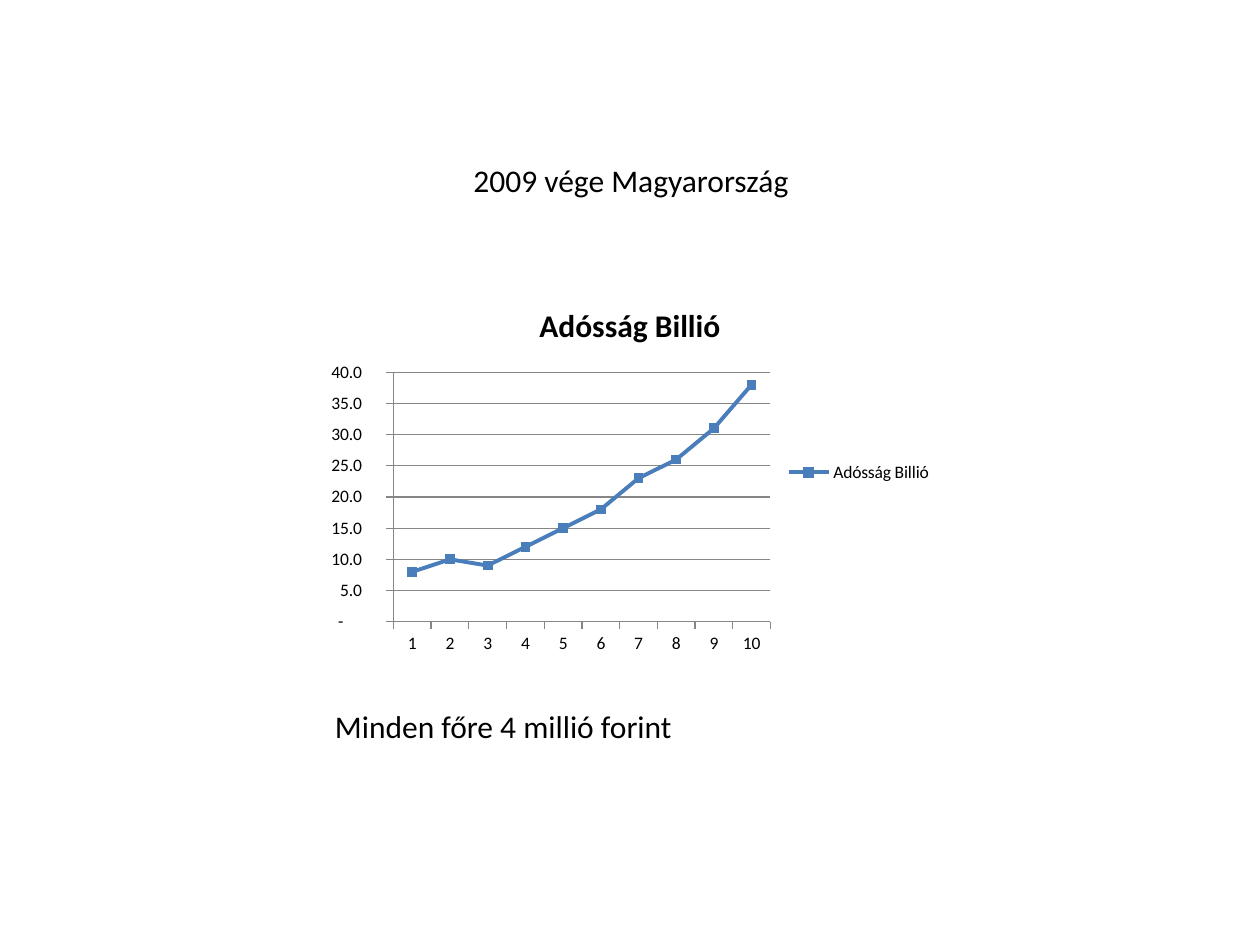
import pptx
import pptx.chart.data
import pptx.dml.color
import pptx.enum.chart
import pptx.enum.text
import pptx.util
from pptx.util import Inches

COLORS = {"text": "000000", "series": "4F81BD", "line": "4A7EBB", "axis": "868686"}
FONT = "Calibri"
SERIES_NAME = "Adósság Billió"
DEBT = [8, 10, 9, 12, 15, 18, 23, 26, 31, 38]
NUMBER_FORMAT = (r'_-* #,##0.0\ _F_t_-;\-* #,##0.0\ _F_t_-;'
                 r'_-* "-"??\ _F_t_-;_-@_-')


def color(name):
    return pptx.dml.color.RGBColor.from_string(COLORS[name])


def style_font(font, size, bold=False):
    font.name = FONT
    font.size = pptx.util.Pt(size)
    font.bold = bold
    font.color.rgb = color("text")


presentation = pptx.Presentation()
presentation.slide_width = Inches(10)
presentation.slide_height = Inches(7.5)
slide = presentation.slides.add_slide(presentation.slide_layouts[6])

# Debt chart
chart_data = pptx.chart.data.CategoryChartData(number_format="0.0")
chart_data.categories = [str(year) for year in range(1, len(DEBT) + 1)]
chart_data.add_series(SERIES_NAME, DEBT)
chart = slide.shapes.add_chart(
    pptx.enum.chart.XL_CHART_TYPE.LINE_MARKERS,
    Inches(2.5), Inches(2.25), Inches(5), Inches(3), chart_data).chart
style_font(chart.font, 10)

chart.has_title = True
chart.chart_title.include_in_layout = False
title_frame = chart.chart_title.text_frame
title_frame.text = SERIES_NAME
style_font(title_frame.paragraphs[0].runs[0].font, 18, bold=True)

chart.has_legend = True
chart.legend.position = pptx.enum.chart.XL_LEGEND_POSITION.RIGHT
chart.legend.include_in_layout = False

for axis in (chart.category_axis, chart.value_axis):
    axis.major_tick_mark = pptx.enum.chart.XL_TICK_MARK.OUTSIDE
    axis.minor_tick_mark = pptx.enum.chart.XL_TICK_MARK.NONE
    axis.format.line.color.rgb = color("axis")
    axis.format.line.width = pptx.util.Pt(0.75)

value_axis = chart.value_axis
value_axis.minimum_scale = 0
value_axis.maximum_scale = 40
value_axis.major_unit = 5
value_axis.tick_labels.number_format = NUMBER_FORMAT
value_axis.tick_labels.number_format_is_linked = False
value_axis.has_major_gridlines = True
value_axis.major_gridlines.format.line.color.rgb = color("axis")
value_axis.major_gridlines.format.line.width = pptx.util.Pt(0.75)

chart.plots[0].vary_by_categories = False
series = chart.plots[0].series[0]
series.smooth = False
series.format.line.color.rgb = color("line")
series.format.line.width = pptx.util.Pt(2.25)
series.marker.style = pptx.enum.chart.XL_MARKER_STYLE.SQUARE
series.marker.size = 5
series.marker.format.fill.solid()
series.marker.format.fill.fore_color.rgb = color("series")
series.marker.format.line.color.rgb = color("line")

# Captions below and above the chart
for text, left, top, width, height in (
        ("Minden főre 4 millió forint", 2.56, 5.56, 4.02, 0.51),
        ("2009 vége Magyarország", 3.66, 1.23, 3.94, 0.5)):
    caption = slide.shapes.add_textbox(
        Inches(left), Inches(top), Inches(width), Inches(height))
    text_frame = caption.text_frame
    text_frame.word_wrap = True
    text_frame.auto_size = pptx.enum.text.MSO_AUTO_SIZE.SHAPE_TO_FIT_TEXT
    text_frame.text = text
    style_font(text_frame.paragraphs[0].runs[0].font, 18)

presentation.save("out.pptx")
